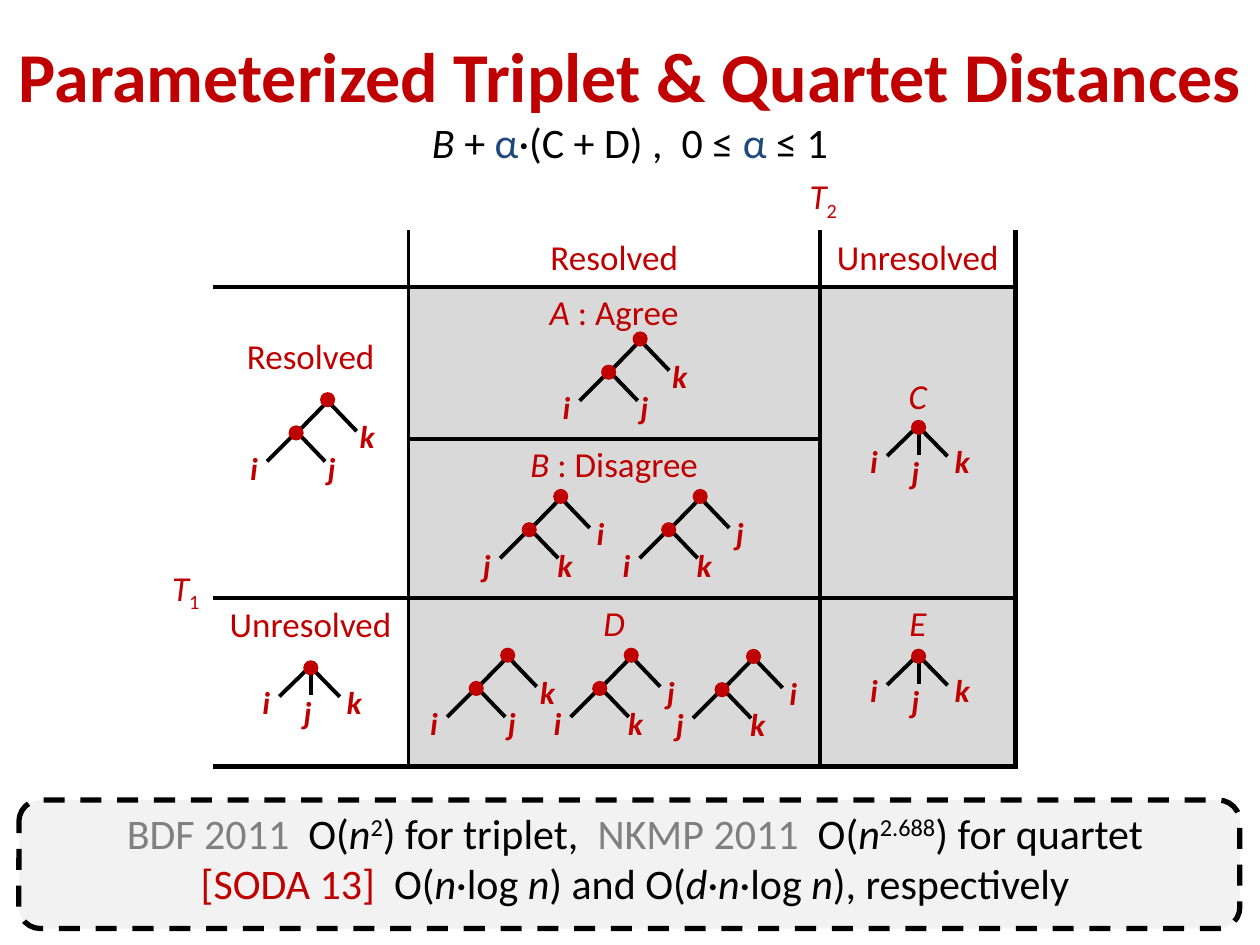
from lxml.etree import SubElement
from pptx import Presentation
from pptx.dml.color import RGBColor
from pptx.enum.dml import MSO_LINE
from pptx.enum.shapes import MSO_CONNECTOR, MSO_SHAPE
from pptx.enum.text import PP_ALIGN
from pptx.oxml.ns import qn
from pptx.util import Pt

RED = RGBColor(0xC0, 0x00, 0x00)
BLACK = RGBColor(0x00, 0x00, 0x00)
BLUE = RGBColor(0x1F, 0x49, 0x7D)
GREY = RGBColor(0x80, 0x80, 0x80)
SHADE = RGBColor(0xD9, 0xD9, 0xD9)
PALE = RGBColor(0xF2, 0xF2, 0xF2)

FONT = "Calibri"
PLAIN = "{2D5ABB26-0587-4C30-8999-92F81FD0307C}"
SHIFT = {"_": "-25000", "^": "30000"}
THIN, THICK = 2.25, 3
DOT = 8.64

COLS = (31, 111.6, 235.4, 111.6)
ROWS = (34.5, 32.3, 86.8, 90.9, 96.5)
MERGES = (((0, 2), (0, 3)), ((2, 0), (4, 0)), ((2, 1), (3, 1)), ((2, 3), (3, 3)))
CELLS = (
    (0, 2, (("T", "i"), ("2", "_")), 3.6, 134.6),
    (1, 2, (("Resolved", ""),), 3.6, 7.2),
    (1, 3, (("Unresolved", ""),), 3.6, 7.2),
    (2, 0, (("T", "i"), ("1", "_")), 160.4, 7.2),
    (2, 1, (("Resolved", ""),), 28, 7.2),
    (2, 2, (("A", "i"), (" : Agree", "")), 3.6, 7.2),
    (2, 3, (("C", "i"),), 51.6, 7.2),
    (3, 2, (("B ", "i"), (": Disagree", "")), 3.6, 7.2),
    (4, 1, (("Unresolved", ""),), 3.6, 7.2),
    (4, 2, (("D", "i"),), 3.6, 7.2),
    (4, 3, (("E", "i"),), 3.6, 7.2),
)

FORK = {
    "lines": ((-18, 18, -1.4, 35.3), (0, 0.7, 16.6, 18),
              (0, 1, -17.3, 18.7), (-17.3, 18, -34.6, 35.3)),
    "spots": ((-53.3, 24.5), (-8.8, 24.5), (11.5, 6.5)),
    "dots": ((-18, 19), (0, 0)),
}
STAR = {
    "lines": ((0, -0.4, 16.6, 16.6), (0, 0, 0, 15.8), (-0.7, -0.4, -18, 16.4)),
    "spots": ((-36.7, 5), (-13, 11), (13.7, 5)),
    "dots": ((0, 0),),
}
TREES = (
    (FORK, 187.2, 228.4, "ijk"),
    (STAR, 177.6, 381.6, "ijk"),
    (STAR, 524.9, 375, "ijk"),
    (STAR, 524.9, 244.2, "ijk"),
    (FORK, 365.8, 193.7, "ijk"),
    (FORK, 320.4, 283.7, "jki"),
    (FORK, 360.7, 374.4, "ikj"),
    (FORK, 400.1, 283.7, "ikj"),
    (FORK, 290.1, 374.4, "ijk"),
    (FORK, 430.6, 375.1, "jki"),
)

TITLE = (("Parameterized Triplet & Quartet Distances", "b", RED),)
RULE = (("B ", "i"), ("+ ", ""), ("α", "", BLUE), ("·(C + D) ,  0 ≤ ", ""),
        ("α", "", BLUE), (" ≤ 1", ""))
PAST = (("BDF 2011", "", GREY), ("  O(", ""), ("n", "i"), ("2", "^"),
        (") for triplet,  ", ""), ("NKMP 2011 ", "", GREY), (" O(", ""),
        ("n", "i"), ("2.688", "^"), (") for quartet", ""))
OURS = (("[SODA 13]", "", RED), ("  O(", ""), ("n", "i"), ("·log ", ""),
        ("n", "i"), (") and O(", ""), ("d", "i"), ("·", ""), ("n", "i"),
        ("·log ", ""), ("n", "i"), ("), respectively", ""))


def write(para, runs, size, tint=BLACK):
    """Fill a centred paragraph with styled runs."""
    para.alignment = PP_ALIGN.CENTER
    for text, style, *own in runs:
        run = para.add_run()
        run.text = text
        font = run.font
        font.name, font.size = FONT, Pt(size)
        font.bold, font.italic = "b" in style, "i" in style
        font.color.rgb = own[0] if own else tint
        if style in SHIFT:
            run._r.get_or_add_rPr().set("baseline", SHIFT[style])


def add_text(shapes, left, top, width, height, pad=7.2):
    """Add a wrapping text box and return its frame."""
    box = shapes.add_textbox(Pt(left), Pt(top), Pt(width), Pt(height))
    frame = box.text_frame
    frame.word_wrap = True
    frame.margin_left = frame.margin_right = Pt(pad)
    return frame


def add_line(shapes, left, top, right, base):
    """Add a black straight line."""
    line = shapes.add_connector(MSO_CONNECTOR.STRAIGHT, Pt(left), Pt(top), Pt(right), Pt(base))
    line.line.color.rgb = BLACK
    line.line.width = Pt(THIN)
    SubElement(line._element.spPr, qn("a:effectLst"))


def add_dot(shapes, x, y):
    """Add a red node centred on a point."""
    dot = shapes.add_shape(MSO_SHAPE.OVAL, Pt(x - DOT / 2), Pt(y - DOT / 2), Pt(DOT), Pt(DOT))
    dot.shadow.inherit = False
    dot.fill.solid()
    dot.fill.fore_color.rgb = RED
    dot.line.fill.background()


def add_tree(slide, form, x, y, names):
    """Add a grouped tree whose root is at a point."""
    shapes = slide.shapes.add_group_shape().shapes
    for x1, y1, x2, y2 in form["lines"]:
        add_line(shapes, x + x1, y + y1, x + x2, y + y2)
    for (dx, dy), name in zip(form["spots"], names):
        frame = add_text(shapes, x + dx, y + dy, 22.3, 28.8, 0)
        write(frame.paragraphs[0], ((name, "bi"),), 18, RED)
    for dx, dy in form["dots"]:
        add_dot(shapes, x + dx, y + dy)


def add_edge(cell, side, width):
    """Draw one black border of a cell."""
    edge = SubElement(cell._tc.get_or_add_tcPr(), qn("a:ln" + side), w=str(Pt(width)))
    fill = SubElement(edge, qn("a:solidFill"))
    SubElement(fill, qn("a:srgbClr"), val=str(BLACK))


def frame_cell(cell, row, col):
    """Set the borders and fill that a grid place calls for."""
    if row and col:
        if col > 1:
            add_edge(cell, "L", THIN)
        add_edge(cell, "R", THICK if col == 3 else THIN)
        if row > 1 and not cell.is_spanned:
            add_edge(cell, "T", THIN)
        add_edge(cell, "B", THICK if row == 4 else THIN)
    if row > 1 and col > 1:
        cell.fill.solid()
        cell.fill.fore_color.rgb = SHADE
    else:
        cell.fill.background()


def add_grid(slide):
    """Add the table of resolved and unresolved cases."""
    table = slide.shapes.add_table(len(ROWS), len(COLS), Pt(90.7), Pt(97.2),
                                   Pt(sum(COLS)), Pt(sum(ROWS))).table
    table.first_row = table.horz_banding = False
    table._tbl.tblPr.find(qn("a:tableStyleId")).text = PLAIN
    for col, width in zip(table.columns, COLS):
        col.width = Pt(width)
    for row, height in zip(table.rows, ROWS):
        row.height = Pt(height)
    for start, end in MERGES:
        table.cell(*start).merge(table.cell(*end))
    for row in range(len(ROWS)):
        for col in range(len(COLS)):
            frame_cell(table.cell(row, col), row, col)
    for row, col, runs, top, left in CELLS:
        cell = table.cell(row, col)
        cell.margin_top, cell.margin_left = Pt(top), Pt(left)
        para = cell.text_frame.paragraphs[0]
        if row > 1 and col > 1:
            para.line_spacing = Pt(24)
        write(para, runs, 20, RED)


def add_head(slide):
    """Add the title with the distance formula."""
    frame = add_text(slide.shapes, 0, 15.1, 720, 85)
    write(frame.paragraphs[0], TITLE, 40)
    para = frame.add_paragraph()
    para.space_after = Pt(12)
    write(para, RULE, 24)


def add_foot(slide):
    """Add the dashed panel with the running times."""
    panel = slide.shapes.add_shape(MSO_SHAPE.ROUNDED_RECTANGLE, Pt(10.8), Pt(457.2),
                                   Pt(697.7), Pt(73.4))
    panel.shadow.inherit = False
    panel.fill.solid()
    panel.fill.fore_color.rgb = PALE
    panel.line.color.rgb = BLACK
    panel.line.width = Pt(THICK)
    panel.line.dash_style = MSO_LINE.DASH
    frame = add_text(slide.shapes, 36.7, 457.9, 652.3, 65.5)
    write(frame.paragraphs[0], PAST, 24)
    write(frame.add_paragraph(), OURS, 24)


def main():
    """Build and save the slide."""
    deck = Presentation()
    deck.slide_width, deck.slide_height = Pt(720), Pt(540)
    slide = deck.slides.add_slide(deck.slide_layouts[6])
    add_grid(slide)
    for tree in TREES:
        add_tree(slide, *tree)
    add_head(slide)
    add_foot(slide)
    deck.save("out.pptx")


if __name__ == "__main__":
    main()
